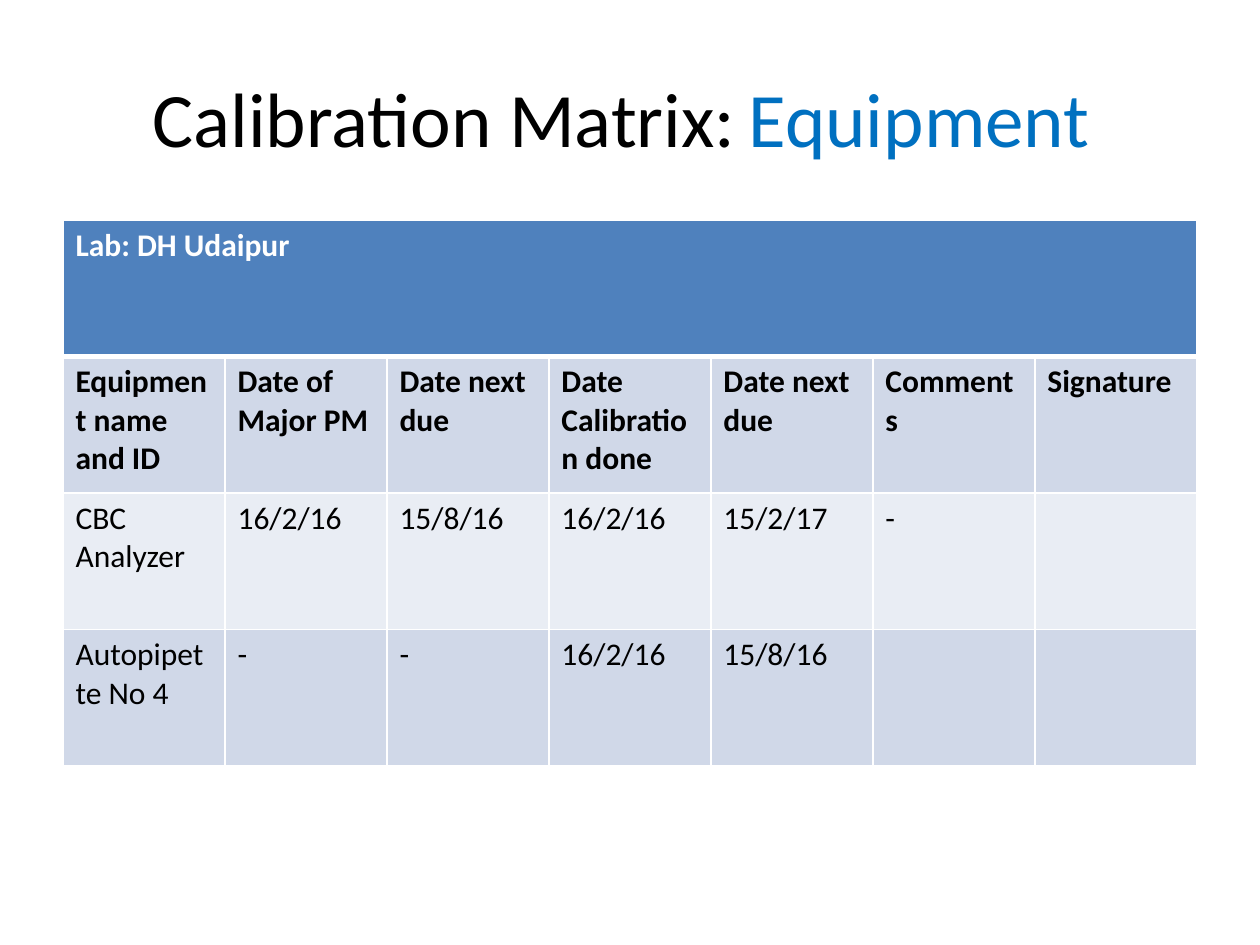
"""Build the equipment calibration matrix slide."""
from dataclasses import dataclass

from lxml.etree import SubElement
from pptx import Presentation
from pptx.dml.color import RGBColor as Rgb
from pptx.enum.text import MSO_ANCHOR as Anchor, PP_ALIGN as Align
from pptx.oxml.ns import qn
from pptx.util import Emu, Pt

PX_PER_INCH = 126
FONT = "Calibri"
COLORS = {
    "white": "FFFFFF",
    "black": "000000",
    "accent": "0070C0",
    "header": "4F81BD",
    "band": "D0D8E8",
    "pale": "E9EDF4",
}


@dataclass(frozen=True)
class TextStyle:
    size: int
    color: str
    bold: bool = False


@dataclass(frozen=True)
class MatrixRow:
    texts: tuple[str, ...]
    fill: str
    style: TextStyle
    top: int = 1
    bottom: int = 1


@dataclass(frozen=True)
class Area:
    left: int
    top: int
    width: int
    height: int

    def emu(self) -> tuple[Emu, ...]:
        return tuple(px(n) for n in (self.left, self.top, self.width, self.height))


BODY = TextStyle(18, "black")
LABEL = TextStyle(18, "black", True)
BANNER = TextStyle(18, "white", True)

TITLE_AREA = Area(63, 38, 1134, 157)
TABLE_AREA = Area(63, 220, 1134, 546)

TITLE_RUNS = (
    ("Calibration Matrix:", TextStyle(44, "black")),
    (" ", TextStyle(32, "black", True)),
    ("Equipment ", TextStyle(44, "accent")),
)
MATRIX = (
    MatrixRow(("Lab: DH Udaipur", "", "", "", "", "", ""), "header", BANNER, bottom=3),
    MatrixRow(
        ("Equipment name and ID", "Date of Major PM", "Date next due",
         "Date Calibration done", "Date next due", "Comments", "Signature"),
        "band", LABEL, top=3,
    ),
    MatrixRow(
        ("CBC Analyzer", "16/2/16", "15/8/16", "16/2/16", "15/2/17", "-", ""),
        "pale", BODY,
    ),
    MatrixRow(
        ("Autopipette No 4", "-", "-", "16/2/16", "15/8/16", "", ""),
        "band", BODY,
    ),
)


def px(length: int) -> Emu:
    return Emu(round(length * 914400 / PX_PER_INCH))


def color(name: str) -> Rgb:
    return Rgb.from_string(COLORS[name])


def add_run(para, text: str, style: TextStyle) -> None:
    run = para.add_run()
    run.text = text
    run.font.name = FONT
    run.font.size = Pt(style.size)
    run.font.bold = style.bold
    run.font.color.rgb = color(style.color)


def add_title(page) -> None:
    box = page.shapes.add_textbox(*TITLE_AREA.emu())
    frame = box.text_frame
    frame.word_wrap = True
    frame.vertical_anchor = Anchor.MIDDLE
    para = frame.paragraphs[0]
    para.alignment = Align.CENTER
    for text, style in TITLE_RUNS:
        add_run(para, text, style)


def set_borders(cell, top: int, bottom: int) -> None:
    properties = cell._tc.get_or_add_tcPr()
    for side, width in (("L", 1), ("R", 1), ("T", top), ("B", bottom)):
        line = SubElement(properties, qn(f"a:ln{side}"), w=str(Pt(width)))
        fill = SubElement(line, qn("a:solidFill"))
        SubElement(fill, qn("a:srgbClr"), val=COLORS["white"])


def fill_row(cells, row: MatrixRow) -> None:
    for cell, text in zip(cells, row.texts):
        set_borders(cell, row.top, row.bottom)
        cell.fill.solid()
        cell.fill.fore_color.rgb = color(row.fill)
        if text:
            add_run(cell.text_frame.paragraphs[0], text, row.style)


def add_matrix(page) -> None:
    columns = len(MATRIX[0].texts)
    table = page.shapes.add_table(len(MATRIX), columns, *TABLE_AREA.emu()).table
    table.cell(0, 0).merge(table.cell(0, columns - 1))
    for table_row, row in zip(table.rows, MATRIX):
        fill_row(table_row.cells, row)


def main() -> None:
    deck = Presentation()
    deck.slide_width, deck.slide_height = px(1260), px(945)
    page = deck.slides.add_slide(deck.slide_layouts[6])
    add_title(page)
    add_matrix(page)
    deck.save("out.pptx")


if __name__ == "__main__":
    main()
